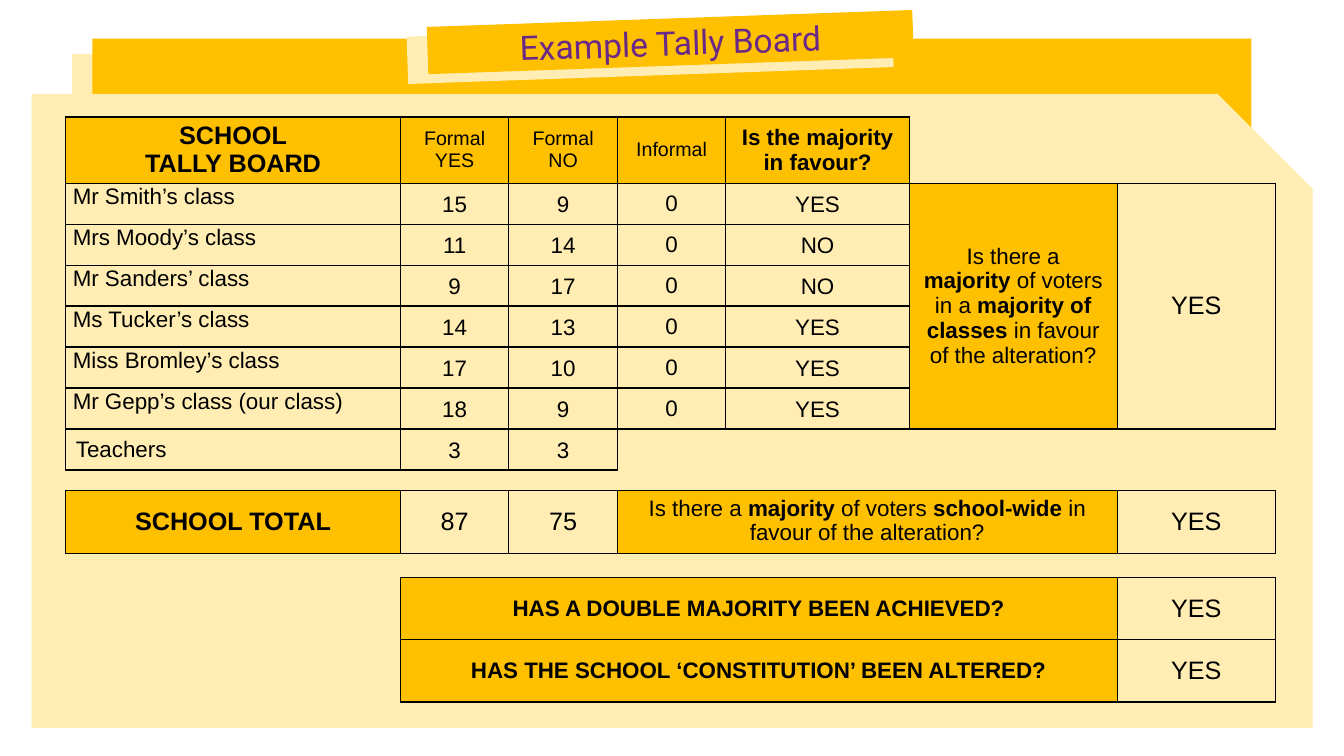
from pptx import Presentation
from pptx.dml.color import RGBColor
from pptx.enum.shapes import MSO_SHAPE as Shape
from pptx.enum.text import MSO_ANCHOR as Anchor, PP_ALIGN as Align
from pptx.oxml import parse_xml
from pptx.oxml.ns import nsdecls
from pptx.util import Pt

GOLD = RGBColor(0xFF, 0xC0, 0x00)
CREAM = RGBColor(0xFF, 0xED, 0xB3)
PURPLE = RGBColor(0x6B, 0x29, 0x87)
BLACK = RGBColor(0, 0, 0)
NO_STYLE = "{2D5ABB26-0587-4C30-8999-92F81FD0307C}"

COLUMNS = [239, 77.5, 77.5, 77.5, 131, 148.5, 113]
CLASS_ROW, TOTAL_ROW = 29.3, 44.6
ROWS = [47.2] + [CLASS_ROW] * 7 + [14.9, TOTAL_ROW, 17, TOTAL_ROW, TOTAL_ROW]

HEADINGS = [("*SCHOOL\nTALLY BOARD*", 18), ("Formal\nYES", 14), ("Formal\nNO", 14),
            ("Informal", 14), ("*Is the majority in favour?*", 16)]
CLASSES = [
    ("Mr Smith’s class", 15, 9, 0, "YES"),
    ("Mrs Moody’s class", 11, 14, 0, "NO"),
    ("Mr Sanders’ class", 9, 17, 0, "NO"),
    ("Ms Tucker’s class", 14, 13, 0, "YES"),
    ("Miss Bromley’s class", 17, 10, 0, "YES"),
    ("Mr Gepp’s class (our class)", 18, 9, 0, "YES"),
]
CLASS_QUESTION = ("Is there a\n*majority* of voters\nin a *majority of*\n"
                  "*classes* in favour\nof the alteration?")
SCHOOL_QUESTION = "Is there a *majority* of voters *school-wide* in favour of the alteration?"
OUTCOMES = ["*HAS A DOUBLE MAJORITY BEEN ACHIEVED?*",
            "*HAS THE SCHOOL ‘CONSTITUTION’ BEEN ALTERED?*"]


def add_panel(page, kind, left, top, width, height, color, rotation=0):
    panel = page.shapes.add_shape(kind, Pt(left), Pt(top), Pt(width), Pt(height))
    panel.shadow.inherit = False
    panel.fill.solid()
    panel.fill.fore_color.rgb = color
    panel.line.fill.background()
    panel.rotation = rotation
    return panel


def write(frame, text, size, font="Arial", color=BLACK, align=Align.CENTER):
    """Write lines of text; asterisks switch bold on and off."""
    bold = False
    for number, line in enumerate(text.split("\n")):
        para = frame.add_paragraph() if number else frame.paragraphs[0]
        para.alignment = align
        for index, piece in enumerate(line.split("*")):
            if index:
                bold = not bold
            if piece:
                span = para.add_run()
                span.text = piece
                span.font.name = font
                span.font.size = Pt(size)
                span.font.bold = bold
                span.font.color.rgb = color


class Board:
    """The tally table, which remembers the places that hold a box."""

    def __init__(self, page, left, top):
        frame = page.shapes.add_table(len(ROWS), len(COLUMNS), Pt(left), Pt(top),
                                      Pt(sum(COLUMNS)), Pt(sum(ROWS)))
        self.table = frame.table
        self.table.first_row = self.table.horz_banding = False
        self.table._tbl.tblPr.find("{*}tableStyleId").text = NO_STYLE
        for column, width in zip(self.table.columns, COLUMNS):
            column.width = Pt(width)
        for row, height in zip(self.table.rows, ROWS):
            row.height = Pt(height)
        self.boxed = set()

    def put(self, row, col, text, size=16, fill=None, rows=1, cols=1,
            align=Align.CENTER, anchor=Anchor.MIDDLE):
        cell = self.table.cell(row, col)
        if rows * cols > 1:
            cell.merge(self.table.cell(row + rows - 1, col + cols - 1))
        self.boxed |= {(row + r, col + c) for r in range(rows) for c in range(cols)}
        cell.vertical_anchor = anchor
        if fill:
            cell.fill.solid()
            cell.fill.fore_color.rgb = fill
        write(cell.text_frame, str(text), size, align=align)
        return cell

    def put_entry(self, row, col, text, **options):
        """A class entry: tight margins and looser lines."""
        cell = self.put(row, col, text, **options)
        cell.margin_left = cell.margin_right = Pt(5)
        cell.margin_top = cell.margin_bottom = 0
        para = cell.text_frame.paragraphs[0]
        para.line_spacing = 1.07
        para.space_after = Pt(6)

    def finish(self):
        """Rule every side that touches a box and shrink the empty cells."""
        for row in range(len(ROWS)):
            for col in range(len(COLUMNS)):
                cell = self.table.cell(row, col)
                if not cell.text_frame.text:
                    cell.margin_top = cell.margin_bottom = 0
                    cell.text_frame.paragraphs[0]._p.append(
                        parse_xml(f'<a:endParaRPr {nsdecls("a")} sz="800"/>'))
                if not cell.fill.type:
                    cell.fill.background()
                sides = {"L": (row, col - 1), "R": (row, col + 1),
                         "T": (row - 1, col), "B": (row + 1, col)}
                for place, (side, neighbour) in enumerate(sides.items()):
                    ruled = self.boxed & {(row, col), neighbour}
                    paint = (f'<a:solidFill><a:srgbClr val="{BLACK}"/></a:solidFill>'
                             if ruled else "<a:noFill/>")
                    cell._tc.get_or_add_tcPr().insert(place, parse_xml(
                        f'<a:ln{side} {nsdecls("a")} w="12700">{paint}</a:ln{side}>'))


def add_folder(page):
    add_panel(page, Shape.RECTANGLE, 51.4, 38.6, 828, 93.6, CREAM)
    add_panel(page, Shape.RECTANGLE, 66, 27.6, 828, 93.6, GOLD)
    add_panel(page, Shape.RECTANGLE, 290.9, 20.2, 347, 33.8, CREAM, 358)
    title = add_panel(page, Shape.RECTANGLE, 305.3, 13.2, 347, 33.8, GOLD, 358)
    title.text_frame.vertical_anchor = Anchor.MIDDLE
    write(title.text_frame, "Example Tally Board", 24, "Roboto", PURPLE)
    sheet = add_panel(page, Shape.SNIP_1_RECTANGLE, 22.6, 67, 915, 453, CREAM)
    sheet.adjustments[0] = 0.15


def add_tally(page):
    board = Board(page, 47, 83.6)
    # Headings
    for col, (text, size) in enumerate(HEADINGS):
        cell = board.put(0, col, text, size, GOLD)
        cell.margin_top = cell.margin_bottom = Pt(2)
    # Classes and teachers
    for row, (name, *results) in enumerate(CLASSES, 1):
        board.put_entry(row, 0, name, align=Align.LEFT, anchor=Anchor.TOP)
        for col, result in enumerate(results, 1):
            add_entry = board.put if col == 3 else board.put_entry
            add_entry(row, col, result)
    board.put(7, 0, "Teachers", align=Align.LEFT)
    for col in (1, 2):
        board.put_entry(7, col, 3)
    board.put(1, 5, CLASS_QUESTION, fill=GOLD, rows=len(CLASSES))
    board.put(1, 6, "YES", 18, rows=len(CLASSES))
    # School total
    board.put(9, 0, "*SCHOOL TOTAL*", 18, GOLD)
    board.put(9, 1, 87, 18)
    board.put(9, 2, 75, 18)
    board.put(9, 3, SCHOOL_QUESTION, fill=GOLD, cols=3, anchor=Anchor.TOP)
    board.put(9, 6, "YES", 18)
    # Outcomes
    for row, question in enumerate(OUTCOMES, 11):
        board.put(row, 1, question, fill=GOLD, cols=5)
        board.put(row, 6, "YES", 18)
    board.finish()


def main():
    deck = Presentation()
    deck.slide_width, deck.slide_height = Pt(960), Pt(540)
    page = deck.slides.add_slide(deck.slide_layouts[6])
    add_folder(page)
    add_tally(page)
    deck.save("out.pptx")


if __name__ == "__main__":
    main()
